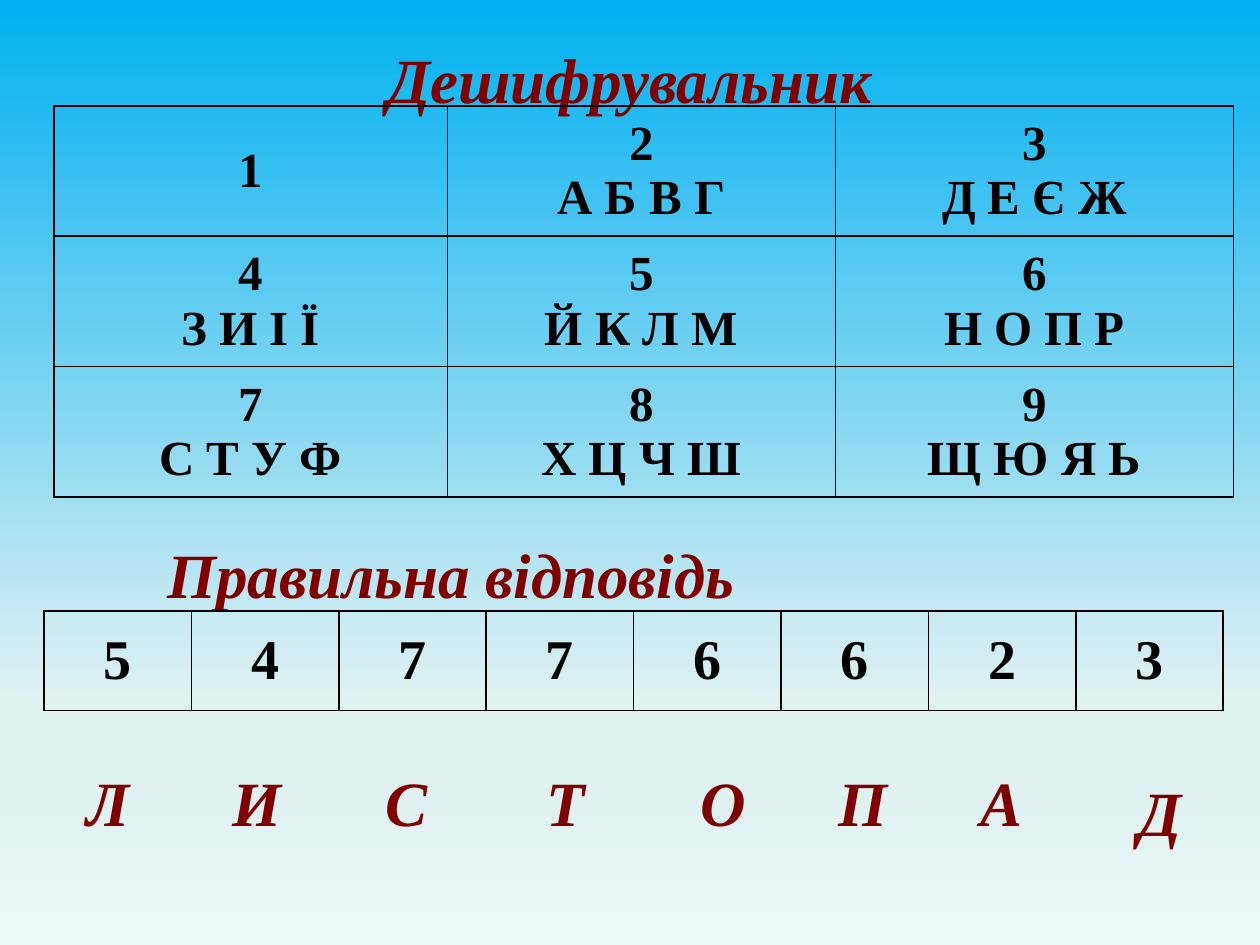
from lxml import etree
from pptx import Presentation
from pptx import util as u
from pptx.dml.color import RGBColor
from pptx.enum import text
from pptx.oxml import parse_xml
from pptx.oxml.ns import nsdecls, qn

FONT = "Times New Roman"
MAROON = RGBColor(0x80, 0x00, 0x00)
BLACK = RGBColor(0x00, 0x00, 0x00)
SKY = [(0, RGBColor(0x00, 0xB0, 0xF0)), (74, RGBColor(0xE0, 0xF1, 0xF2)),
       (83, RGBColor(0xE0, 0xF1, 0xF2)), (100, RGBColor(0xEB, 0xF6, 0xF7))]

# text, (left, top, width, height) in inches
HEADINGS = [
    ("Дешифрувальник", (2.32, 0.21, 5.35, 0.47)),
    ("Правильна відповідь", (0.51, 4.14, 6.14, 0.55)),
]
CIPHER = [
    ["1", "2\nА Б В Г", "3\nД Е Є Ж"],
    ["4\nЗ И І Ї", "5\nЙ К Л М", "6\nН О П Р"],
    ["7\nС Т У Ф", "8\nХ Ц Ч Ш", "9\nЩ Ю Я Ь"],
]
CIPHER_COLUMNS = [3.12, 3.08, 3.16]
CODE = [list("54776623")]
CODE_COLUMNS = [1.17] * 8
# letter, left, top
ANSWER = [("Л", 0.35, 5.95), ("И", 1.53, 5.95), ("С", 2.72, 5.95), ("Т", 3.98, 5.95),
          ("О", 5.23, 5.95), ("П", 6.34, 5.95), ("А", 7.44, 5.95), ("Д", 8.7, 6.03)]
LETTER_SIZE = 1.02


def set_gradient_background(slide, stops):
    stop_xml = "".join(
        f'<a:gs pos="{share * 1000}"><a:srgbClr val="{color}"/></a:gs>'
        for share, color in stops)
    background = parse_xml(
        f'<p:bg {nsdecls("p", "a")}><p:bgPr><a:gradFill rotWithShape="1">'
        f'<a:gsLst>{stop_xml}</a:gsLst><a:lin ang="5400000" scaled="0"/>'
        '</a:gradFill><a:effectLst/></p:bgPr></p:bg>')
    slide.element.find(qn("p:cSld")).insert(0, background)


def style_paragraph(paragraph, size, color, italic=False):
    paragraph.alignment = text.PP_ALIGN.CENTER
    font = paragraph.font
    font.name, font.size, font.bold, font.italic = FONT, u.Pt(size), True, italic
    font.color.rgb = color


def add_label(slide, words, box):
    shape = slide.shapes.add_textbox(*map(u.Inches, box))
    frame = shape.text_frame
    frame.word_wrap = False
    frame.margin_top = u.Inches(0.11)
    frame.text = words
    style_paragraph(frame.paragraphs[0], 36, MAROON, italic=True)


def add_borders(cell):
    properties = cell._tc.get_or_add_tcPr()
    for index, side in enumerate(("lnL", "lnR", "lnT", "lnB")):
        line = etree.Element(qn(f"a:{side}"), w=str(u.Pt(1)))
        fill = etree.SubElement(line, qn("a:solidFill"))
        etree.SubElement(fill, qn("a:srgbClr"), val=str(BLACK))
        properties.insert(index, line)


def add_grid(slide, rows, columns, left, top, height, size):
    frame = slide.shapes.add_table(
        len(rows), len(columns), u.Inches(left), u.Inches(top),
        u.Inches(sum(columns)), u.Inches(height))
    table = frame.table
    table.first_row = table.horz_banding = False
    for column, width in zip(table.columns, columns):
        column.width = u.Inches(width)
    for row, values in zip(table.rows, rows):
        row.height = u.Inches(height / len(rows))
        for cell, value in zip(row.cells, values):
            cell.text = value
            cell.vertical_anchor = text.MSO_ANCHOR.MIDDLE
            cell.fill.background()
            add_borders(cell)
            for paragraph in cell.text_frame.paragraphs:
                style_paragraph(paragraph, size, BLACK)
                properties = paragraph._p.get_or_add_pPr()
                properties.set("marL", str(u.Inches(0.38)))
                properties.set("indent", str(-u.Inches(0.38)))


def main():
    presentation = Presentation()
    presentation.slide_width, presentation.slide_height = u.Inches(10), u.Inches(7.5)
    slide = presentation.slides.add_slide(presentation.slide_layouts[6])
    set_gradient_background(slide, SKY)
    for words, box in HEADINGS:
        add_label(slide, words, box)
    add_grid(slide, CIPHER, CIPHER_COLUMNS, 0.43, 0.84, 3.1, 28)
    add_grid(slide, CODE, CODE_COLUMNS, 0.35, 4.85, 0.79, 32)
    for letter, left, top in ANSWER:
        add_label(slide, letter, (left, top, LETTER_SIZE, LETTER_SIZE))
    presentation.save("out.pptx")


if __name__ == "__main__":
    main()
